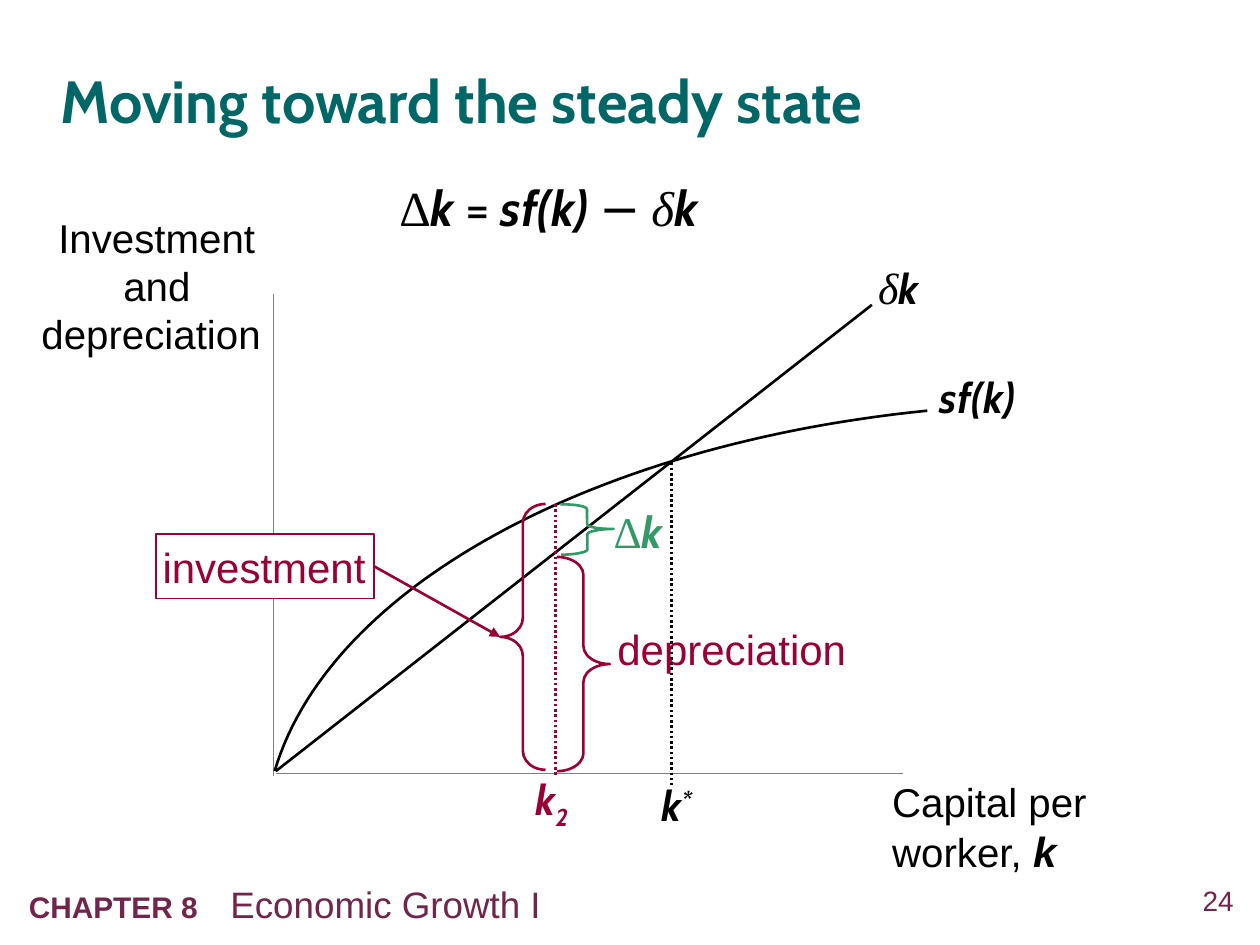
from dataclasses import dataclass
from lxml.etree import SubElement
from pptx import Presentation
from pptx.dml.color import RGBColor
from pptx.enum.dml import MSO_LINE
from pptx.enum.shapes import MSO_CONNECTOR, MSO_SHAPE
from pptx.enum.text import MSO_ANCHOR, MSO_AUTO_SIZE, PP_ALIGN
from pptx.oxml.ns import qn
from pptx.util import Inches, Pt


@dataclass(frozen=True)
class Theme:
    black: str = "000000"
    white: str = "FFFFFF"
    axis: str = "808080"
    teal: str = "006666"
    plum: str = "71254B"
    crimson: str = "990033"
    green: str = "339966"
    sans: str = "Arial"
    display: str = "Cabin"
    serif: str = "Times New Roman"
    title: int = 34
    equation: int = 28
    symbol: int = 25
    label: int = 24
    axis_label: int = 23
    footer: int = 21
    chapter: int = 17
    number: int = 16
    thin: float = 1
    medium: float = 1.5


@dataclass(frozen=True)
class Span:
    text: str
    size: float
    font: str
    color: str
    bold: bool = False
    italic: bool = False
    baseline: int = 0


THEME = Theme()
COLUMNS, ROWS = 100, 75
CELL = Inches(10) / COLUMNS


def grid(*lengths):
    return [round(length * CELL) for length in lengths]


def plain(text, size=THEME.label, color=THEME.black, **style):
    return Span(text, size, THEME.sans, color, **style)


def variable(text, size=THEME.label, color=THEME.black, baseline=0):
    return Span(text, size, THEME.display, color, True, True, baseline)


def operator(text):
    return Span(text, THEME.equation, THEME.display, THEME.black)


def greek(text, size=THEME.symbol, color=THEME.black, italic=False):
    return Span(text, size, THEME.serif, color, italic=italic)


def write(frame, spans, align=PP_ALIGN.LEFT, anchor=MSO_ANCHOR.MIDDLE, inset=0):
    frame.word_wrap = True
    frame.auto_size = MSO_AUTO_SIZE.NONE
    frame.vertical_anchor = anchor
    frame.margin_left = frame.margin_right = Inches(inset)
    frame.margin_top = frame.margin_bottom = Inches(inset)
    para = frame.paragraphs[0]
    para.alignment = align
    for span in spans:
        for index, line in enumerate(span.text.split("\n")):
            if index:
                para.add_line_break()
            run = para.add_run()
            run.text = line
            font = run.font
            font.name, font.size = span.font, Pt(span.size)
            font.bold, font.italic = span.bold, span.italic
            font.color.rgb = RGBColor.from_string(span.color)
            if span.baseline:
                font._element.set("baseline", str(span.baseline * 1000))
    return para


def add_label(page, area, spans, **layout):
    box = page.shapes.add_textbox(*grid(*area))
    return write(box.text_frame, spans, **layout)


def style_line(line, color, width):
    line.color.rgb = RGBColor.from_string(color)
    line.width = Pt(width)


def add_line(page, start, end, color=THEME.black, width=THEME.medium, dotted=False):
    line = page.shapes.add_connector(MSO_CONNECTOR.STRAIGHT, *grid(*start, *end))
    style_line(line.line, color, width)
    if dotted:
        line.line.dash_style = MSO_LINE.ROUND_DOT
    SubElement(line._element.spPr, qn("a:effectLst"))
    return line


def add_arrow(page, source, target, color):
    arrow = add_line(page, (0, 0), (1, 1), color)
    arrow.begin_connect(source, 3)
    arrow.end_connect(target, 1)
    SubElement(arrow.line._get_or_add_ln(), qn("a:tailEnd"), type="triangle")


def add_brace(page, area, curl, color, rotation=0):
    brace = page.shapes.add_shape(MSO_SHAPE.LEFT_BRACE, *grid(*area))
    brace.adjustments[0] = curl
    brace.rotation = rotation
    brace.shadow.inherit = False
    brace.fill.background()
    style_line(brace.line, color, THEME.medium)
    return brace


def add_curve(page, controls, steps=60):
    def point(share):
        rest = 1 - share
        weights = (rest**3, 3 * rest**2 * share, 3 * rest * share**2, share**3)
        return grid(*(sum(w * c for w, c in zip(weights, axis)) for axis in zip(*controls)))

    builder = page.shapes.build_freeform(*point(0))
    builder.add_line_segments([point(step / steps) for step in range(1, steps + 1)], close=False)
    curve = builder.convert_to_shape()
    curve.shadow.inherit = False
    curve.fill.background()
    style_line(curve.line, THEME.black, THEME.medium)


def add_boxed_label(page, area, span):
    box = page.shapes.add_shape(MSO_SHAPE.RECTANGLE, *grid(*area))
    box.shadow.inherit = False
    box.fill.solid()
    box.fill.fore_color.rgb = RGBColor.from_string(THEME.white)
    style_line(box.line, span.color, THEME.thin)
    write(box.text_frame, [span], inset=0.05)
    return box


def add_title(page, text):
    title = page.shapes.title
    title.left, title.top, title.width, title.height = grid(4.8, 3, 90.1, 9.6)
    span = Span(text, THEME.title, THEME.display, THEME.teal, bold=True)
    write(title.text_frame, [span]).line_spacing = 1.05


def add_footer(page):
    add_label(page, (92.4, 70.1, 5.5, 3.2), [plain("24", THEME.number, THEME.plum)],
              align=PP_ALIGN.RIGHT, anchor=MSO_ANCHOR.TOP)
    para = add_label(page, (1.3, 69, 81.8, 4.5), [
        plain("CHAPTER 8\t", THEME.chapter, THEME.plum, bold=True),
        plain("Economic Growth I", THEME.footer, THEME.plum),
    ], anchor=MSO_ANCHOR.TOP, inset=0.1)
    tabs = SubElement(para._p.get_or_add_pPr(), qn("a:tabLst"))
    SubElement(tabs, qn("a:tab"), pos=str(Inches(1.6)), algn="l")


def add_axes(page):
    add_line(page, (21.7, 23.3), (21.7, 61.6), THEME.axis, THEME.thin)
    add_line(page, (21.9, 61.4), (71.7, 61.4), THEME.axis, THEME.thin)
    add_label(page, (2.4, 16.9, 20.1, 11.5),
              [plain("Investment and depreciation ", THEME.axis_label)], align=PP_ALIGN.CENTER)
    add_label(page, (70.8, 61.7, 17.5, 7.8), [
        plain("Capital per \nworker, ", THEME.axis_label),
        plain("k", bold=True, italic=True),
    ])


def add_functions(page):
    add_curve(page, [(73.6, 32.6), (46.8, 35.3), (26.1, 46.7), (21.8, 61.2)])
    add_label(page, (74.6, 29.5, 8.8, 4), [variable("sf(k)")])
    add_line(page, (21.9, 61.2), (69.2, 24.2))
    add_label(page, (69.7, 20.7, 5.8, 4.2), [greek("δ", italic=True), variable("k")])


def add_capital_levels(page):
    add_line(page, (53.3, 36.7), (53.3, 62.3), dotted=True)
    add_label(page, (52.5, 61.9, 5.8, 4), [variable("k"), variable("*", baseline=30)])
    add_line(page, (44.1, 40), (44.1, 61.7), THEME.crimson, dotted=True)
    add_label(page, (42.5, 61.7, 5, 4), [
        variable("k", color=THEME.crimson),
        variable("2", color=THEME.crimson, baseline=-25),
    ])


def add_gaps(page):
    investment = add_boxed_label(page, (12.4, 42.4, 17.3, 5.1),
                                 plain("investment", color=THEME.crimson))
    brace = add_brace(page, (39.7, 40, 3.6, 21.1), 0.42, THEME.crimson)
    add_arrow(page, investment, brace, THEME.crimson)
    add_brace(page, (44.2, 44.2, 4.2, 17), 0.34, THEME.crimson, 180)
    add_label(page, (49, 49.5, 18.3, 4), [plain("depreciation", color=THEME.crimson)],
              anchor=MSO_ANCHOR.TOP)
    add_brace(page, (44.5, 40, 4.2, 4), 0.1, THEME.green, 179.3)
    add_label(page, (48.7, 40.1, 5.8, 4.2), [
        greek("Δ", color=THEME.green),
        variable("k", THEME.symbol, THEME.green),
    ], anchor=MSO_ANCHOR.TOP)


def add_equation(page):
    size = THEME.equation
    add_label(page, (31.7, 14.1, 34, 4.7), [
        greek("Δ", size), variable("k ", size), operator("= "),
        variable("sf(k) ", size), operator("− "),
        greek("δ", size, italic=True), variable("k", size),
    ])


def main():
    deck = Presentation()
    deck.slide_width, deck.slide_height = grid(COLUMNS, ROWS)
    page = deck.slides.add_slide(deck.slide_layouts[5])
    add_footer(page)
    add_title(page, "Moving toward the steady state")
    add_axes(page)
    add_functions(page)
    add_capital_levels(page)
    add_gaps(page)
    add_equation(page)
    deck.save("out.pptx")


if __name__ == "__main__":
    main()
